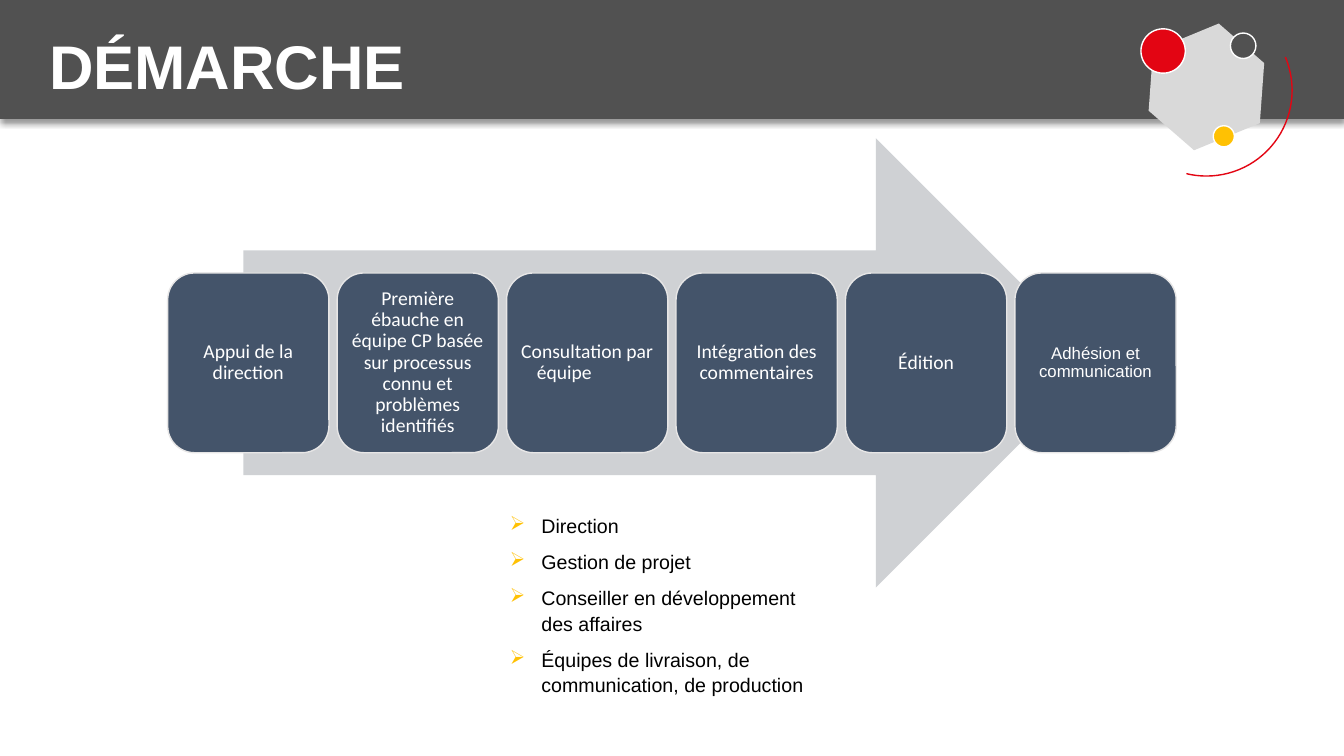
from lxml import etree
from pptx import Presentation
from pptx.dml.color import RGBColor
from pptx.enum.shapes import MSO_SHAPE
from pptx.enum.text import MSO_ANCHOR, MSO_AUTO_SIZE, PP_ALIGN
from pptx.oxml.ns import qn
from pptx.util import Pt

WHITE = RGBColor(0xFF, 0xFF, 0xFF)
BLACK = RGBColor(0, 0, 0)
CHARCOAL = RGBColor(0x51, 0x51, 0x51)
SILVER = RGBColor(0xD9, 0xD9, 0xD9)
ARROW_GREY = RGBColor(0xCF, 0xD1, 0xD4)
NAVY = RGBColor(0x44, 0x54, 0x6A)
PALE = RGBColor(0xE7, 0xE6, 0xE6)
RED = RGBColor(0xE3, 0x05, 0x13)
YELLOW = RGBColor(0xFF, 0xC1, 0x03)

STEPS = [
    ("Appui de la direction", "Calibri", 14),
    ("Première ébauche en équipe CP basée sur processus connu et problèmes identifiés",
     "Calibri", 14),
    ("Consultation par équipe\t", "Calibri", 14),
    ("Intégration des commentaires", "Calibri", 14),
    ("Édition", "Calibri", 14),
    ("Adhésion et communication", "Arial", 12),
]
TEAMS = [
    "Direction",
    "Gestion de projet",
    "Conseiller en développement des affaires",
    "Équipes de livraison, de communication, de production",
]


def add_shape(page, kind, left, top, width, height, fill=None, line=None):
    shape = page.shapes.add_shape(kind, Pt(left), Pt(top), Pt(width), Pt(height))
    shape.shadow.inherit = False
    if fill is None:
        shape.fill.background()
    else:
        shape.fill.solid()
        shape.fill.fore_color.rgb = fill
    if line is None:
        shape.line.fill.background()
    else:
        shape.line.color.rgb = line
        shape.line.width = Pt(1)
    return shape


def add_span(para, text, font, size, color, bold=False):
    span = para.add_run()
    span.text = text
    span.font.name = font
    span.font.size = Pt(size)
    span.font.color.rgb = color
    span.font.bold = bold


def add_header(page, left, top, width, height):
    # Band with a soft shadow below it
    band = add_shape(page, MSO_SHAPE.RECTANGLE, left, top, width, height, CHARCOAL)
    effects = band._element.spPr.find(qn("a:effectLst"))
    shadow = etree.SubElement(effects, qn("a:outerShdw"), blurRad=str(Pt(4)),
                              dist=str(Pt(3)), dir="5400000", algn="t", rotWithShape="0")
    tint = etree.SubElement(shadow, qn("a:srgbClr"), val="000000")
    etree.SubElement(tint, qn("a:alpha"), val="40000")

    # Title
    box = page.shapes.add_textbox(Pt(left + 28), Pt(top + 22.3), Pt(767), Pt(65))
    box.text_frame.word_wrap = True
    para = box.text_frame.paragraphs[0]
    para.line_spacing = 0.9
    add_span(para, "DÉMARCHE", "Arial", 44, WHITE, bold=True)


def add_ornament(page, left, top):
    hexagon = add_shape(page, MSO_SHAPE.HEXAGON, left + 16.5, top + 20.2, 89.3, 77, SILVER)
    hexagon.rotation = 337.6
    # Circles: offset from the corner, diameter, colour
    for dx, dy, size, color in [(14.4, 17.2, 31.7, RED), (66, 86.4, 15.1, YELLOW),
                                (78.3, 20.2, 18.2, CHARCOAL)]:
        add_shape(page, MSO_SHAPE.OVAL, left + dx, top + dy, size, size, color, WHITE)
    arc = add_shape(page, MSO_SHAPE.ARC, left, top, 122.4, 122.4, line=RED)
    for index, degrees in enumerate((337.1, 103.5)):
        arc.adjustments[index] = degrees * 0.6


def add_process(page, left, top, width, height):
    # Arrow behind the steps
    arrow_width = width * 0.85
    add_shape(page, MSO_SHAPE.RIGHT_ARROW, left + (width - arrow_width) / 2, top,
              arrow_width, height, ARROW_GREY)

    # Steps, evenly spread over the width
    step_width, step_height = 115.2, height * 0.4
    pitch = (width - step_width) / (len(STEPS) - 1)
    for index, (text, font, size) in enumerate(STEPS):
        step = add_shape(page, MSO_SHAPE.ROUNDED_RECTANGLE, left + index * pitch,
                         top + (height - step_height) / 2, step_width, step_height,
                         NAVY, PALE)
        frame = step.text_frame
        frame.word_wrap = True
        frame.vertical_anchor = MSO_ANCHOR.MIDDLE
        frame.margin_left = frame.margin_right = Pt(4.2)
        frame.margin_top = frame.margin_bottom = Pt(4.2)
        para = frame.paragraphs[0]
        para.alignment = PP_ALIGN.CENTER
        para.line_spacing = 0.9
        add_span(para, text, font, size, WHITE)


def add_teams(page, left, top, width, height):
    box = page.shapes.add_textbox(Pt(left), Pt(top), Pt(width), Pt(height))
    frame = box.text_frame
    frame.word_wrap = True
    frame.auto_size = MSO_AUTO_SIZE.SHAPE_TO_FIT_TEXT
    for index, team in enumerate(TEAMS):
        para = frame.add_paragraph() if index else frame.paragraphs[0]
        para.level = 1
        props = para._p.get_or_add_pPr()
        props.set("marL", str(Pt(22.5)))
        props.set("indent", str(-Pt(22.5)))
        bullet_color = etree.SubElement(props, qn("a:buClr"))
        etree.SubElement(bullet_color, qn("a:srgbClr"), val=str(YELLOW))
        etree.SubElement(props, qn("a:buChar"), char="➢")
        para.line_spacing = 1.07
        para.space_after = Pt(8)
        add_span(para, team, "Arial", 14, BLACK)


def main():
    deck = Presentation()
    deck.slide_width, deck.slide_height = Pt(960), Pt(540)
    page = deck.slides.add_slide(deck.slide_layouts[6])
    add_process(page, 119.8, 98.7, 720.4, 321)
    add_teams(page, 357.1, 362.2, 229, 140.4)
    add_header(page, 0, 0, 960, 85)
    add_ornament(page, 800.6, 3.4)
    deck.save("out.pptx")


if __name__ == "__main__":
    main()
